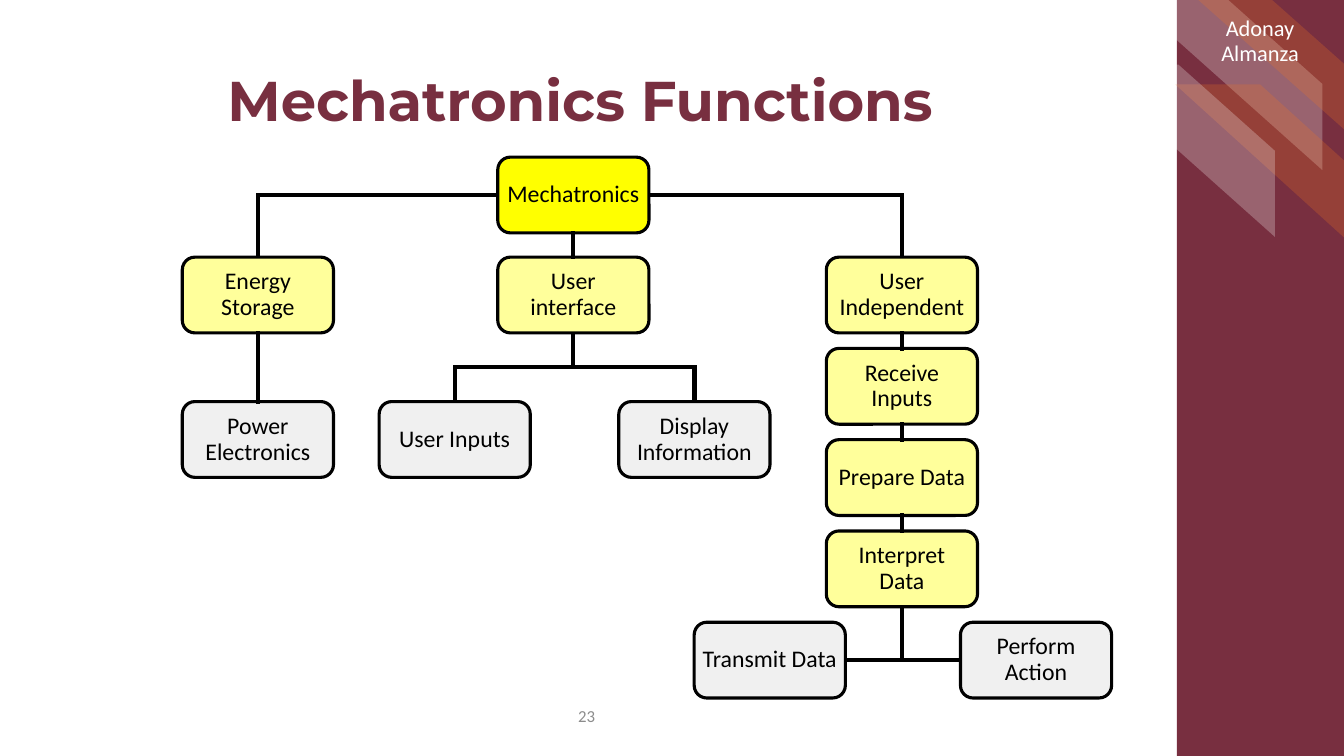
from itertools import pairwise

from lxml.etree import SubElement
from pptx import Presentation
from pptx.dml.color import RGBColor
from pptx.enum.shapes import MSO_CONNECTOR, MSO_SHAPE
from pptx.enum.text import MSO_ANCHOR, PP_ALIGN
from pptx.oxml.ns import qn
from pptx.util import Cm, Pt

COLORS = {
    "garnet": "782F40", "orange": "EE7624", "white": "FFFFFF", "black": "000000",
    "root": "FFFF00", "branch": "FFFF9B", "leaf": "F0F0F0", "number": "8C8C8C",
}
BOX_WIDTH, BOX_HEIGHT = 3.81, 1.91
TOP, BOTTOM = 0, 2  # connection sites of a rounded rectangle


def color(name):
    return RGBColor.from_string(COLORS[name])


class Chart:
    """Draws on one slide; all lengths are centimetres."""

    def __init__(self, page):
        self.page = page

    def set_text(self, shape, text, size, ink, font="Calibri", bold=False, inset=0.0):
        frame = shape.text_frame
        frame.text = text
        frame.word_wrap = True
        frame.vertical_anchor = MSO_ANCHOR.MIDDLE
        frame.margin_left = frame.margin_right = Cm(inset)
        frame.margin_top = frame.margin_bottom = Cm(0)
        paragraph = frame.paragraphs[0]
        paragraph.alignment = PP_ALIGN.CENTER
        paragraph.line_spacing = 0.9
        paragraph.space_before = Pt(0)
        paragraph.font.name = font
        paragraph.font.size = Pt(size)
        paragraph.font.bold = bold
        paragraph.font.color.rgb = color(ink)

    def title(self, text, left, top, width, height):
        title = self.page.shapes.title
        title.left, title.top = Cm(left), Cm(top)
        title.width, title.height = Cm(width), Cm(height)
        self.set_text(title, text, 40, "garnet", "Montserrat", True)

    def label(self, text, left, top, width, height, size, ink):
        box = self.page.shapes.add_textbox(Cm(left), Cm(top), Cm(width), Cm(height))
        self.set_text(box, text, size, ink, inset=0.3)

    def shape(self, kind, left, top, width, height, fill):
        shape = self.page.shapes.add_shape(kind, Cm(left), Cm(top), Cm(width), Cm(height))
        shape.shadow.inherit = False
        shape.fill.solid()
        shape.fill.fore_color.rgb = color(fill)
        shape.line.fill.background()
        return shape

    def stripe(self, left, top, width, height, fill):
        """Add a mirrored diagonal stripe at 25 % opacity."""
        stripe = self.shape(MSO_SHAPE.DIAGONAL_STRIPE, left, top, width, height, fill)
        properties = stripe.element.spPr
        properties.find(qn("a:xfrm")).set("flipH", "1")
        SubElement(next(properties.iter(qn("a:srgbClr"))), qn("a:alpha"), val="25000")

    def node(self, text, center, top, fill):
        box = self.shape(MSO_SHAPE.ROUNDED_RECTANGLE, center - BOX_WIDTH / 2, top,
                         BOX_WIDTH, BOX_HEIGHT, fill)
        box.line.color.rgb = color("black")
        box.line.width = Pt(2.25)
        self.set_text(box, text, 17, "black", inset=0.1)
        return box

    def line(self, start, end):
        line = self.page.shapes.add_connector(
            MSO_CONNECTOR.STRAIGHT, *(Cm(value) for value in (*start, *end)))
        line.line.color.rgb = color("black")
        line.line.width = Pt(3)
        properties = line.element.spPr
        properties.find(qn("a:ln")).set("cap", "sq")
        SubElement(properties, qn("a:effectLst"))
        return line

    def link(self, upper, lower):
        line = self.line((0, 0), (1, 1))
        line.begin_connect(upper, BOTTOM)
        line.end_connect(lower, TOP)

    def route(self, *points):
        for start, end in pairwise(points):
            self.line(start, end)


def main():
    deck = Presentation()
    deck.slide_width, deck.slide_height = Cm(33.87), Cm(19.05)
    chart = Chart(deck.slides.add_slide(deck.slide_layouts[5]))

    chart.shape(MSO_SHAPE.RECTANGLE, 29.66, 0, 4.21, 19.05, "garnet")
    chart.stripe(28.47, -0.05, 4.86, 4.34, "white")
    chart.stripe(29.62, 2.13, 4.28, 3.88, "orange")
    chart.stripe(27.27, 1.63, 4.86, 4.34, "white")
    chart.stripe(30.2, 0, 3.72, 3.3, "orange")
    chart.title("Mechatronics Functions", 1.07, 1.27, 27.1, 2.67)
    chart.label("Adonay Almanza", 29.64, 0, 4.23, 2.11, 16, "white")
    chart.label("23", 13.77, 17.7, 2.03, 0.76, 12, "number")

    energy, interface, independent = 6.5, 14.45, 22.73
    inputs, display, transmit, perform = 11.46, 17.5, 19.4, 26.11
    root_top, branch_top, leaf_top, step = 3.96, 6.48, 10.12, 2.3
    last_top = branch_top + 4 * step
    half_width, half_height = BOX_WIDTH / 2, BOX_HEIGHT / 2

    # Elbows lie behind the boxes
    root_middle = root_top + half_height
    for center in (energy, independent):
        chart.route((interface, root_middle), (center, root_middle), (center, branch_top))
    branch_bottom = branch_top + BOX_HEIGHT
    fork = (branch_bottom + leaf_top) / 2
    chart.route((interface, branch_bottom), (interface, fork))
    for center in (inputs, display):
        chart.route((interface, fork), (center, fork), (center, leaf_top))
    action_line = last_top + half_height
    chart.route((independent, last_top - step + BOX_HEIGHT), (independent, action_line))
    chart.route((transmit + half_width, action_line), (perform - half_width, action_line))

    root = chart.node("Mechatronics", interface, root_top, "root")
    storage = chart.node("Energy Storage", energy, branch_top, "branch")
    user = chart.node("User interface", interface, branch_top, "branch")
    stages = ("User Independent", "Receive Inputs", "Prepare Data", "Interpret Data")
    chain = [chart.node(text, independent, branch_top + row * step, "branch")
             for row, text in enumerate(stages)]
    power = chart.node("Power Electronics", energy, leaf_top, "leaf")
    for text, center, top in (
        ("User Inputs", inputs, leaf_top), ("Display Information", display, leaf_top),
        ("Transmit Data", transmit, last_top), ("Perform Action", perform, last_top),
    ):
        chart.node(text, center, top, "leaf")

    for upper, lower in ((root, user), (storage, power), *pairwise(chain)):
        chart.link(upper, lower)
    deck.save("out.pptx")


if __name__ == "__main__":
    main()
